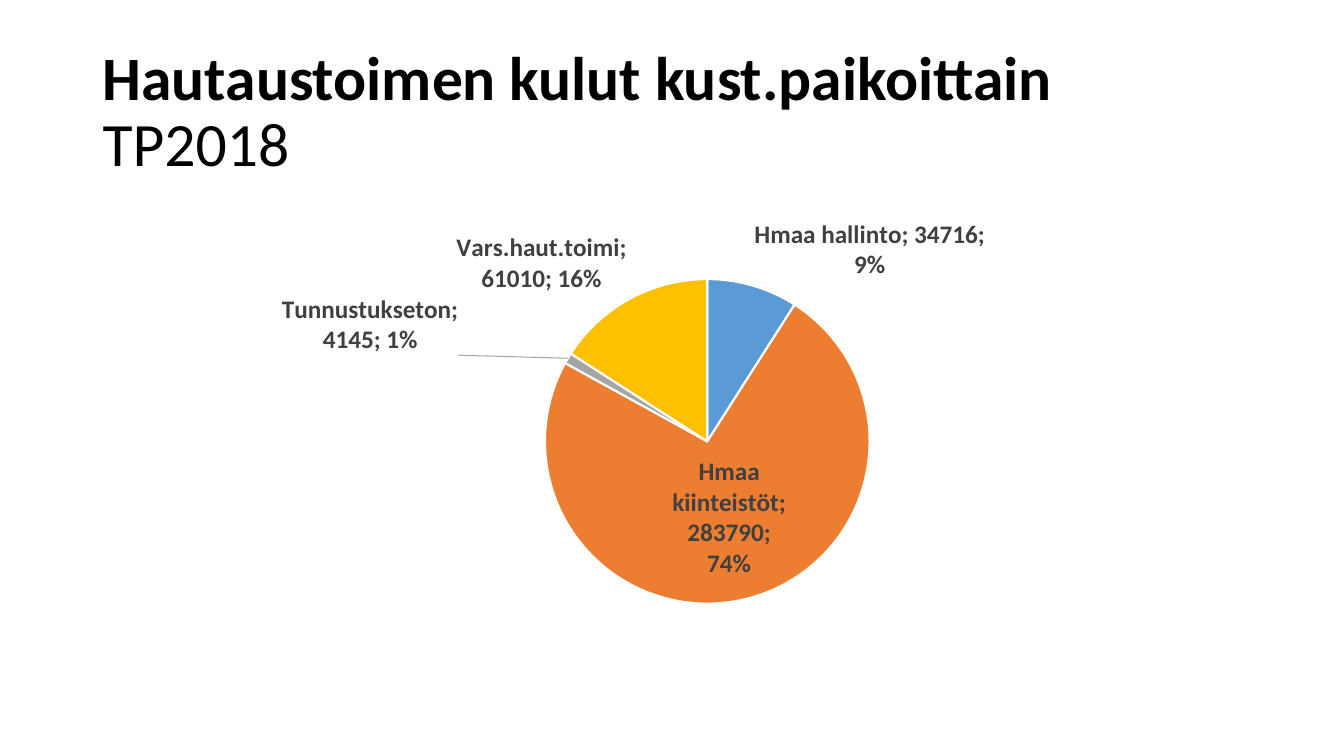
from lxml import etree
from pptx import Presentation
from pptx.chart.data import CategoryChartData
from pptx.dml.color import RGBColor
from pptx.enum.chart import XL_CHART_TYPE, XL_LABEL_POSITION
from pptx.enum.text import MSO_ANCHOR
from pptx.oxml import parse_xml
from pptx.oxml.ns import nsdecls, qn
from pptx.util import Inches, Pt

PIE = XL_CHART_TYPE.PIE
BEST_FIT = XL_LABEL_POSITION.BEST_FIT
MIDDLE = MSO_ANCHOR.MIDDLE
FONT = "Calibri"
COLORS = {"text": "000000", "label": "404040", "edge": "FFFFFF", "leader": "A6A6A6"}
COSTS = [
    ("Hmaa hallinto", 34716, "5B9BD5"),
    ("Hmaa kiinteistöt", 283790, "ED7D31"),
    ("Tunnustukseton", 4145, "A5A5A5"),
    ("Vars.haut.toimi", 61010, "FFC000"),
]
MOVED_LABEL = 2


def rgb(name):
    return RGBColor.from_string(COLORS[name])


def manual_layout(target="", **fractions):
    """Return a chart layout element with places as fractions of the chart."""
    parts = "".join(f'<c:{key} val="{value}"/>' for key, value in fractions.items())
    return parse_xml(f'<c:layout {nsdecls("c")}><c:manualLayout>{target}{parts}'
                     "</c:manualLayout></c:layout>")


def add_title(page, left, top, width, height):
    box = page.shapes.add_textbox(left, top, width, height)
    frame = box.text_frame
    frame.word_wrap = True
    frame.vertical_anchor = MIDDLE
    para = frame.paragraphs[0]
    para.line_spacing = 0.9
    para.font.name = FONT
    para.font.size = Pt(44)
    para.font.color.rgb = rgb("text")
    for text, bold in (("Hautaustoimen kulut kust.paikoittain ", True), ("TP2018", False)):
        span = para.add_run()
        span.text = text
        span.font.bold = bold


def style_labels(plot):
    plot.has_data_labels = True
    labels = plot.data_labels
    labels.show_category_name = True
    labels.show_value = True
    labels.show_percentage = True
    labels.position = BEST_FIT
    labels.font.name = FONT
    labels.font.size = Pt(18)
    labels.font.bold = True
    labels.font.color.rgb = rgb("label")
    element = plot.data_labels._element
    leader = element.find(qn("c:showLeaderLines"))
    if leader is None:
        leader = etree.SubElement(element, qn("c:showLeaderLines"))
    leader.set("val", "1")
    leader.addnext(parse_xml(
        f'<c:leaderLines {nsdecls("c", "a")}><c:spPr><a:ln w="9525"><a:solidFill>'
        f'<a:srgbClr val="{COLORS["leader"]}"/></a:solidFill></a:ln></c:spPr></c:leaderLines>'))
    moved = parse_xml(
        f'<c:dLbl {nsdecls("c")}><c:idx val="{MOVED_LABEL}"/><c:dLblPos val="bestFit"/>'
        '<c:showLegendKey val="0"/><c:showVal val="1"/><c:showCatName val="1"/>'
        '<c:showSerName val="0"/><c:showPercent val="1"/><c:showBubbleSize val="0"/></c:dLbl>')
    moved.insert(1, manual_layout(x=-0.09, y=0))
    element.insert(0, moved)
    # Leader lines are only drawn for labels held by the series
    plot.series[0]._element.find(qn("c:cat")).addprevious(element)


def add_cost_chart(page, left, top, width, height):
    data = CategoryChartData()
    data.categories = [name for name, _, _ in COSTS]
    data.add_series("Series 1", [value for _, value, _ in COSTS])
    chart = page.shapes.add_chart(PIE, left, top, width, height, data).chart
    chart.has_legend = False
    chart.has_title = False
    chart.font.name = FONT
    chart.font.size = Pt(10)
    chart.font.color.rgb = rgb("text")
    plot = chart.plots[0]
    plot.vary_by_categories = True
    for index, (_, _, color) in enumerate(COSTS):
        wedge = plot.series[0].points[index].format
        wedge.fill.solid()
        wedge.fill.fore_color.rgb = RGBColor.from_string(color)
        wedge.line.color.rgb = rgb("edge")
        wedge.line.width = Pt(1.5)
    style_labels(plot)
    area = chart._chartSpace.chart.plotArea
    for old in area.findall(qn("c:layout")):
        area.remove(old)
    area.insert(0, manual_layout('<c:layoutTarget val="inner"/><c:xMode val="edge"/>'
                                 '<c:yMode val="edge"/>', x=0.39, y=0.16, w=0.28, h=0.68))


def main():
    deck = Presentation()
    deck.slide_width, deck.slide_height = Inches(13.33), Inches(7.5)
    page = deck.slides.add_slide(deck.slide_layouts[6])
    left, width = Inches(0.92), Inches(11.5)
    add_title(page, left, Inches(0.4), width, Inches(1.45))
    add_cost_chart(page, left, Inches(2), width, Inches(4.76))
    deck.save("out.pptx")


if __name__ == "__main__":
    main()
